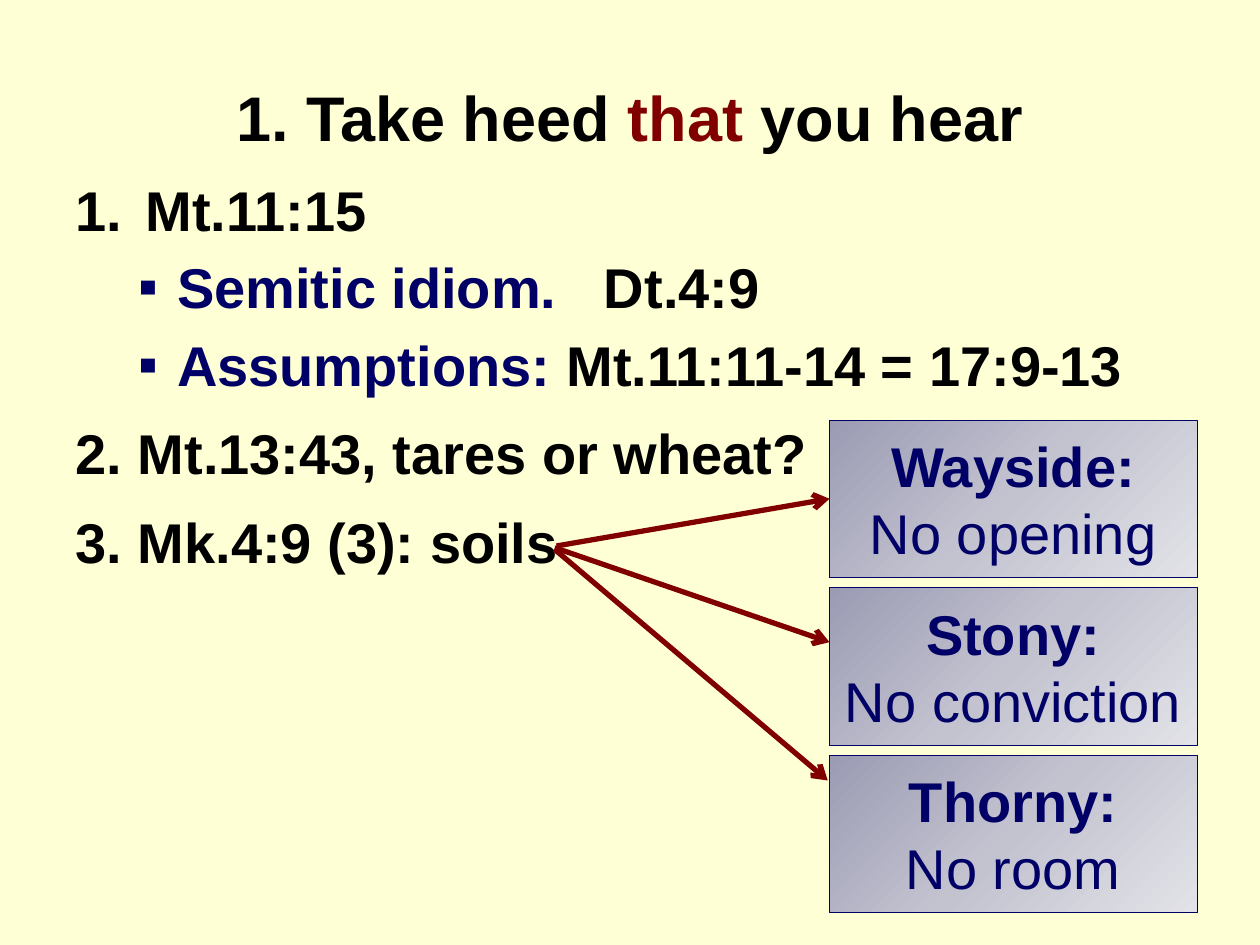
from copy import deepcopy

from lxml.etree import SubElement
from pptx import Presentation
from pptx.dml.color import RGBColor
from pptx.enum.shapes import MSO_CONNECTOR, MSO_SHAPE
from pptx.enum.text import MSO_ANCHOR, MSO_AUTO_SIZE, PP_ALIGN
from pptx.oxml.ns import qn
from pptx.util import Pt

COLORS = {
    "background": "FFFFD6", "black": "000000", "navy": "000066", "maroon": "800000",
    "box_dark": "9B9BB4", "box_middle": "C3C3D0", "box_light": "E2E2E8",
}
FONT = "Arial"

# Content: runs are (text, color)
TITLE = [("1. Take heed ", "black"), ("that", "maroon"), (" you hear", "black")]
# (style, space after, runs)
BODY = [
    ("number", 0, [("Mt.11:15", "black")]),
    ("square", 0, [("Semitic idiom.", "navy"), (" ", "navy"), ("Dt.4:9", "black")]),
    ("square", 6, [("Assumptions: ", "navy"), ("Mt.11:11-14 = 17:9-13", "black")]),
    ("plain", 6, [("2. Mt.13:43, tares or wheat?", "black")]),
    ("plain", 6, [("3. Mk.4:9 (3): soils", "black")]),
]
SOILS = [("Wayside:", "No opening"), ("Stony:", "No conviction"), ("Thorny:", "No room")]
ARROWS = [((318, 312), (474, 285)), ((317, 313), (474, 367)), ((317, 314), (473, 446))]

# Style: level, left margin, hanging indent, bullet tag and attributes
LIST_STYLES = {
    "number": (0, 40, 40, "a:buAutoNum", {"type": "arabicPeriod"}),
    "square": (1, 58, 22, "a:buChar", {"char": "▪"}),
    "plain": (0, 0, 0, "a:buNone", {}),
}
WIDE_SPACE = 17.8  # widens the lone space before a reference

BOX_LEFT, BOX_TOP, BOX_WIDTH, BOX_HEIGHT, BOX_PITCH = 474, 240, 210, 90, 95.75
BOX_STOPS = [(0, "box_dark"), (0.5, "box_middle"), (1, "box_light")]


def rgb(name):
    return RGBColor.from_string(COLORS[name])


def add_run(paragraph, text, color, size=32, bold=True):
    run = paragraph.add_run()
    run.text = text
    run.font.name, run.font.size, run.font.bold = FONT, Pt(size), bold
    run.font.color.rgb = rgb(color)
    return run


def place(shape, left, top, width, height):
    shape.left, shape.top, shape.width, shape.height = map(Pt, (left, top, width, height))


def fill_gradient(shape):
    shape.fill.gradient()
    shape.fill.gradient_angle = 315
    stop_list = shape._element.spPr.find(".//" + qn("a:gsLst"))
    stop_list.insert(1, deepcopy(stop_list[0]))
    for stop, (position, color) in zip(shape.fill.gradient_stops, BOX_STOPS):
        stop.position = position
        stop.color.rgb = rgb(color)


def add_title(slide):
    title = slide.shapes.title
    place(title, 36, 21.6, 648, 90)
    title.text_frame.vertical_anchor = MSO_ANCHOR.MIDDLE
    paragraph = title.text_frame.paragraphs[0]
    paragraph.alignment = PP_ALIGN.CENTER
    for text, color in TITLE:
        add_run(paragraph, text, color, size=36)


def add_body(slide):
    body = slide.placeholders[1]
    place(body, 36, 96.5, 648, 425.5)
    frame = body.text_frame
    frame.auto_size = MSO_AUTO_SIZE.NONE
    for index, (style, space_after, runs) in enumerate(BODY):
        paragraph = frame.add_paragraph() if index else frame.paragraphs[0]
        level, margin, hanging, bullet, attributes = LIST_STYLES[style]
        paragraph.level = level
        paragraph.space_before, paragraph.space_after = Pt(6), Pt(space_after)
        properties = paragraph._p.get_or_add_pPr()
        properties.set("marL", str(Pt(margin)))
        properties.set("indent", str(-Pt(hanging)))
        SubElement(properties, qn(bullet), attributes)
        for text, color in runs:
            run = add_run(paragraph, text, color)
            if text == " ":
                run.font._element.set("spc", str(round(WIDE_SPACE * 100)))


def add_box(slide, index, heading, detail):
    box = slide.shapes.add_shape(MSO_SHAPE.RECTANGLE, 0, 0, 0, 0)
    place(box, BOX_LEFT, BOX_TOP + index * BOX_PITCH, BOX_WIDTH, BOX_HEIGHT)
    box.shadow.inherit = False
    fill_gradient(box)
    box.line.color.rgb = rgb("navy")
    box.line.width = Pt(0.25)
    frame = box.text_frame
    frame.vertical_anchor = MSO_ANCHOR.MIDDLE
    for paragraph, text, bold in ((frame.paragraphs[0], heading, True),
                                  (frame.add_paragraph(), detail, False)):
        paragraph.alignment = PP_ALIGN.CENTER
        add_run(paragraph, text, "navy", bold=bold)


def add_arrow(slide, start, end):
    arrow = slide.shapes.add_connector(MSO_CONNECTOR.STRAIGHT, *map(Pt, start + end))
    arrow.line.color.rgb = rgb("maroon")
    arrow.line.width = Pt(3)
    SubElement(arrow.line._get_or_add_ln(), qn("a:tailEnd"), {"type": "arrow"})
    SubElement(arrow._element.spPr, qn("a:effectLst"))


def main():
    presentation = Presentation()
    presentation.slide_width, presentation.slide_height = Pt(720), Pt(540)
    slide = presentation.slides.add_slide(presentation.slide_layouts[1])
    slide.background.fill.solid()
    slide.background.fill.fore_color.rgb = rgb("background")

    add_title(slide)
    add_body(slide)
    # Soil boxes, then the arrows that lead to them
    for index, (heading, detail) in enumerate(SOILS):
        add_box(slide, index, heading, detail)
    for start, end in ARROWS:
        add_arrow(slide, start, end)
    presentation.save("out.pptx")


if __name__ == "__main__":
    main()
